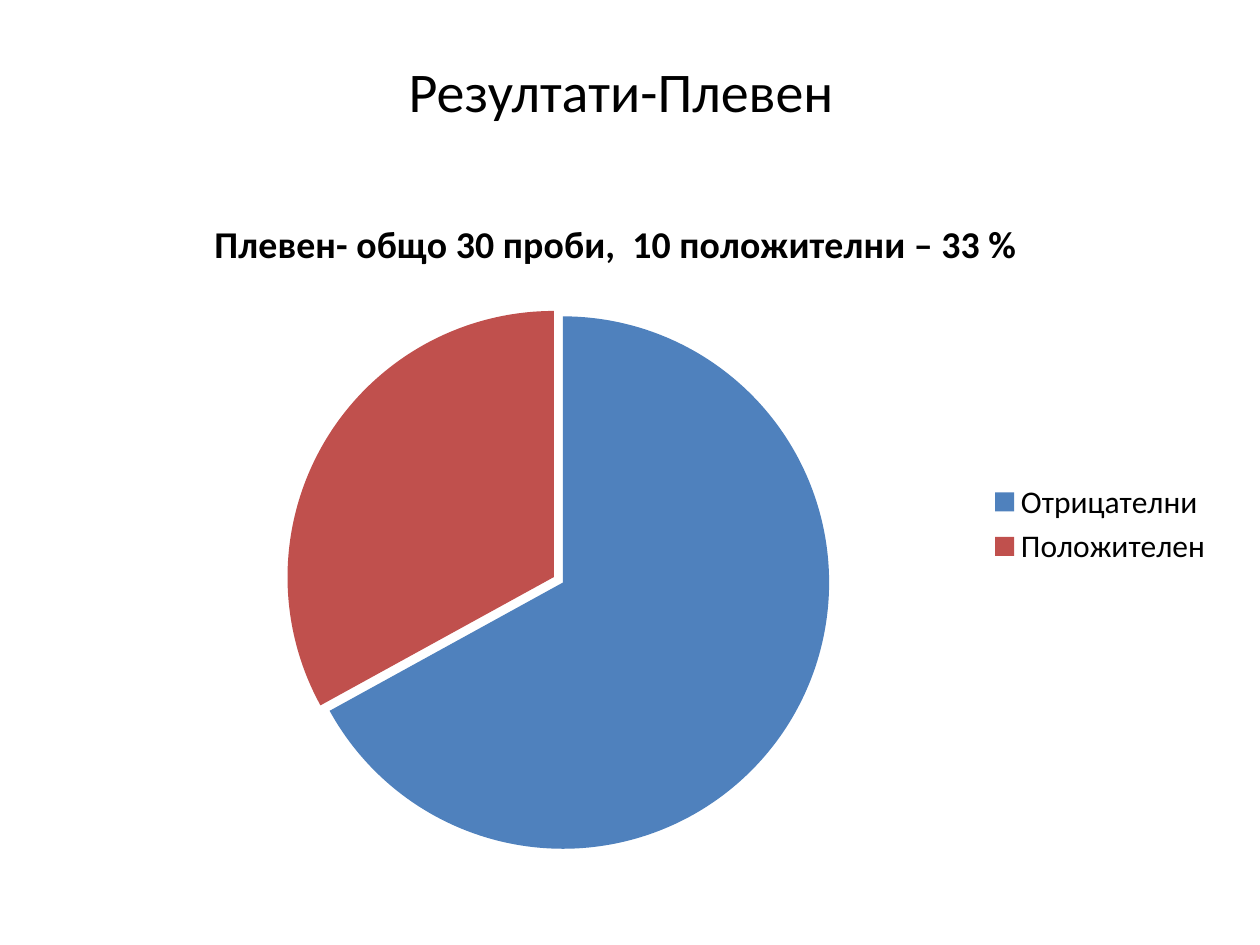
import pptx
import pptx.chart.data
import pptx.dml.color
import pptx.enum.chart
import pptx.enum.text
import pptx.oxml
import pptx.oxml.ns
import pptx.util

FONT = "Calibri"
BLACK = "000000"
SLICES = [("Отрицателни", 67, "4F81BD"), ("Положителен", 33, "C0504D")]


def color(hex_string):
    return pptx.dml.color.RGBColor.from_string(hex_string)


def format_font(font, size, bold=False, hex_string=BLACK):
    font.name = FONT
    font.size = pptx.util.Pt(size)
    font.bold = bold
    font.color.rgb = color(hex_string)


def write_text(text_frame, text, **font_format):
    paragraph = text_frame.paragraphs[0]
    paragraph.alignment = pptx.enum.text.PP_ALIGN.CENTER
    run = paragraph.add_run()
    run.text = text
    format_font(run.font, **font_format)


def chart_element(tag, **attributes):
    element = pptx.oxml.parse_xml(
        f'<c:{tag} xmlns:c="http://schemas.openxmlformats.org/drawingml/2006/chart"/>'
    )
    for name, value in attributes.items():
        element.set(name, str(value))
    return element


def set_layout(parent, index, **settings):
    for old_layout in parent.findall(pptx.oxml.ns.qn("c:layout")):
        parent.remove(old_layout)
    layout = chart_element("layout")
    manual = chart_element("manualLayout")
    for tag, value in settings.items():
        manual.append(chart_element(tag, val=value))
    layout.append(manual)
    parent.insert(index, layout)


def add_title(slide, text):
    box = slide.shapes.add_textbox(*map(pptx.util.Pt, (8.64, 31.68, 692.64, 39.6)))
    box.text_frame.word_wrap = True
    box.text_frame.vertical_anchor = pptx.enum.text.MSO_ANCHOR.MIDDLE
    write_text(box.text_frame, text, size=32)


def add_pie(slide, title, slices):
    data = pptx.chart.data.CategoryChartData()
    data.categories = [name for name, value, fill in slices]
    data.add_series("Series 1", [value for name, value, fill in slices])
    chart = slide.shapes.add_chart(
        pptx.enum.chart.XL_CHART_TYPE.PIE,
        *map(pptx.util.Pt, (54, 100.08, 646.56, 398.88)),
        data,
    ).chart
    format_font(chart.font, size=18)

    chart.has_title = True
    write_text(chart.chart_title.text_frame, title, size=21.6, bold=True)
    set_layout(chart.chart_title._element, 1, xMode="edge", yMode="edge", x=0.1, y=0.05)

    chart.has_legend = True
    chart.legend.position = pptx.enum.chart.XL_LEGEND_POSITION.RIGHT
    chart.legend.include_in_layout = False

    plot = chart.plots[0]
    plot.vary_by_categories = True
    series = plot.series[0]
    for index, (name, value, fill) in enumerate(slices):
        point_fill = series.points[index].format.fill
        point_fill.solid()
        point_fill.fore_color.rgb = color(fill)
    first_point = series._element.find(pptx.oxml.ns.qn("c:dPt"))
    first_point.addprevious(chart_element("explosion", val=2))
    plot_area = plot._element.getparent()
    set_layout(plot_area, 0, layoutTarget="inner", xMode="edge", yMode="edge",
               x=0.17, y=0.19, w=0.48, h=0.78)


def main():
    presentation = pptx.Presentation()
    presentation.slide_width = pptx.util.Pt(720)
    presentation.slide_height = pptx.util.Pt(540)
    slide = presentation.slides.add_slide(presentation.slide_layouts[6])
    add_title(slide, "Резултати-Плевен")
    add_pie(slide, "Плевен- общо 30 проби,  10 положителни – 33 %", SLICES)
    presentation.save("out.pptx")


if __name__ == "__main__":
    main()
